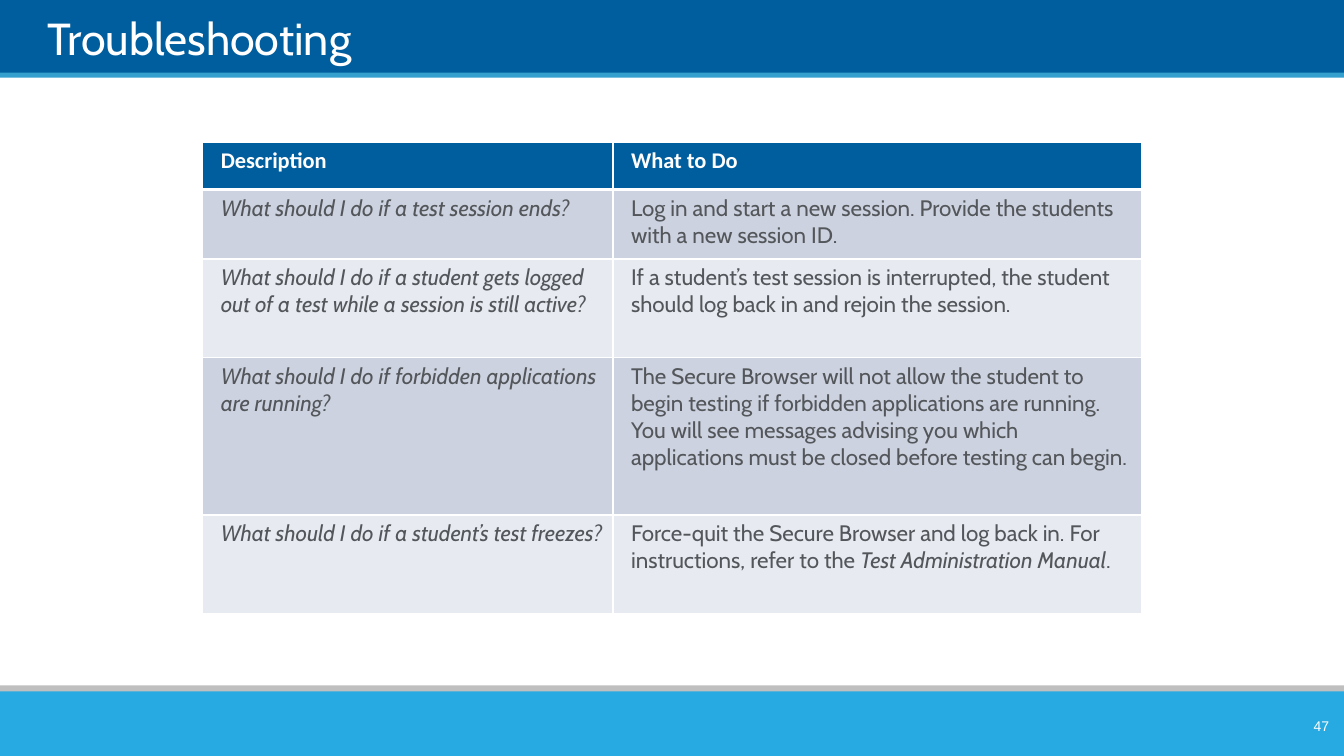
from lxml import etree
from pptx import Presentation
from pptx import util as u
from pptx.dml.color import RGBColor
from pptx.enum import shapes, text
from pptx.oxml import ns

NAVY = RGBColor(0x00, 0x5E, 0x9E)
BLUE = RGBColor(0x35, 0xA0, 0xCE)
SKY = RGBColor(0x27, 0xAA, 0xE1)
SILVER = RGBColor(0xBF, 0xBF, 0xBF)
DARK_BAND = RGBColor(0xCC, 0xD2, 0xDF)
LIGHT_BAND = RGBColor(0xE7, 0xEA, 0xF0)
INK = RGBColor(0x53, 0x56, 0x5A)
WHITE = RGBColor(0xFF, 0xFF, 0xFF)

SLIDE_WIDTH, SLIDE_HEIGHT = 13.33, 7.5
COLUMN_WIDTHS = [4.07, 5.24]
ROW_HEIGHTS = [0.47, 0.69, 0.98, 1.56, 0.98]
HEADINGS = ["Description", "What to Do"]
# Each answer is a list of (text, italic) runs.
QUESTIONS = [
    ("What should I do if a test session ends?",
     [("Log in and start a new session. Provide the students with a new session ID.", False)]),
    ("What should I do if a student gets logged out of a test while a session is still active?",
     [("If a student’s test session is interrupted, the student should log back in "
       "and rejoin the session.", False)]),
    ("What should I do if forbidden applications are running?",
     [("The Secure Browser will not allow the student to begin testing if forbidden "
       "applications are running. You will see messages advising you which applications "
       "must be closed before testing can begin.", False)]),
    ("What should I do if a student’s test freezes?",
     [("Force-quit the Secure Browser and log back in. For instructions, refer to the ", False),
      ("Test Administration Manual", True), (".", False)]),
]


class SlideBuilder:
    def __init__(self, slide, body_font="Cabin", heading_font="Calibri"):
        self.slide = slide
        self.body_font = body_font
        self.heading_font = heading_font

    def style(self, font, name, size, color, bold=False, italic=False):
        font.name, font.size, font.bold, font.italic = name, u.Pt(size), bold, italic
        font.color.rgb = color

    def bar(self, top, height, color):
        """Add a full-width band."""
        shape = self.slide.shapes.add_shape(
            shapes.MSO_SHAPE.RECTANGLE, 0, u.Inches(top), u.Inches(SLIDE_WIDTH), u.Inches(height))
        shape.shadow.inherit = False
        shape.fill.solid()
        shape.fill.fore_color.rgb = color
        shape.line.fill.background()

    def label(self, words, box, font, size, anchor, align, inset):
        frame = self.slide.shapes.add_textbox(*map(u.Inches, box)).text_frame
        frame.word_wrap = True
        frame.vertical_anchor = anchor
        frame.margin_left = frame.margin_right = u.Inches(inset)
        frame.margin_top = frame.margin_bottom = u.Inches(inset / 2)
        frame.text = words
        paragraph = frame.paragraphs[0]
        paragraph.alignment = align
        self.style(paragraph.runs[0].font, font, size, WHITE)

    def border(self, cell, side, points):
        properties = cell._tc.get_or_add_tcPr()
        line = etree.SubElement(properties, ns.qn(f"a:ln{side}"), w=str(u.Pt(points)))
        fill = etree.SubElement(line, ns.qn("a:solidFill"))
        etree.SubElement(fill, ns.qn("a:srgbClr"), val=str(WHITE))

    def cell(self, cell, runs, fill, font, color, bold=False, top=1, bottom=1):
        """Fill one table cell with (text, italic) runs; top and bottom are border widths."""
        for side, points in (("L", 1), ("R", 1), ("T", top), ("B", bottom)):
            self.border(cell, side, points)
        cell.fill.solid()
        cell.fill.fore_color.rgb = fill
        paragraph = cell.text_frame.paragraphs[0]
        paragraph._p.get_or_add_pPr().set("marL", str(u.Inches(0.08)))
        paragraph.space_after = u.Pt(4)
        for words, italic in runs:
            run = paragraph.add_run()
            run.text = words
            self.style(run.font, font, 16, color, bold, italic)

    def question_table(self, left, top):
        table = self.slide.shapes.add_table(
            len(ROW_HEIGHTS), len(COLUMN_WIDTHS), u.Inches(left), u.Inches(top),
            u.Inches(sum(COLUMN_WIDTHS)), u.Inches(sum(ROW_HEIGHTS))).table
        table.horz_banding = False
        for column, width in zip(table.columns, COLUMN_WIDTHS):
            column.width = u.Inches(width)
        for row, height in zip(table.rows, ROW_HEIGHTS):
            row.height = u.Inches(height)
        for column, heading in enumerate(HEADINGS):
            self.cell(table.cell(0, column), [(heading, False)], NAVY,
                      self.heading_font, WHITE, bold=True, bottom=3)
        for row, (question, answer) in enumerate(QUESTIONS, start=1):
            band = DARK_BAND if row % 2 else LIGHT_BAND
            for column, runs in enumerate([[(question, True)], answer]):
                self.cell(table.cell(row, column), runs, band, self.body_font, INK,
                          top=3 if row == 1 else 1)


def main():
    presentation = Presentation()
    presentation.slide_width = u.Inches(SLIDE_WIDTH)
    presentation.slide_height = u.Inches(SLIDE_HEIGHT)
    builder = SlideBuilder(presentation.slides.add_slide(presentation.slide_layouts[6]))

    for top, height, color in ((-0.01, 0.75, NAVY), (0.72, 0.05, BLUE),
                               (6.8, 0.14, SILVER), (6.86, 0.64, SKY)):
        builder.bar(top, height, color)
    builder.question_table(2.01, 1.41)
    builder.label("Troubleshooting", (0.47, 0.07, 12.05, 0.57), "Cabin", 32,
                  text.MSO_ANCHOR.BOTTOM, text.PP_ALIGN.LEFT, 0)
    builder.label("47", (12.51, 7.05, 0.77, 0.3), "Arial", 10,
                  text.MSO_ANCHOR.MIDDLE, text.PP_ALIGN.RIGHT, 0.1)
    presentation.save("out.pptx")


if __name__ == "__main__":
    main()
